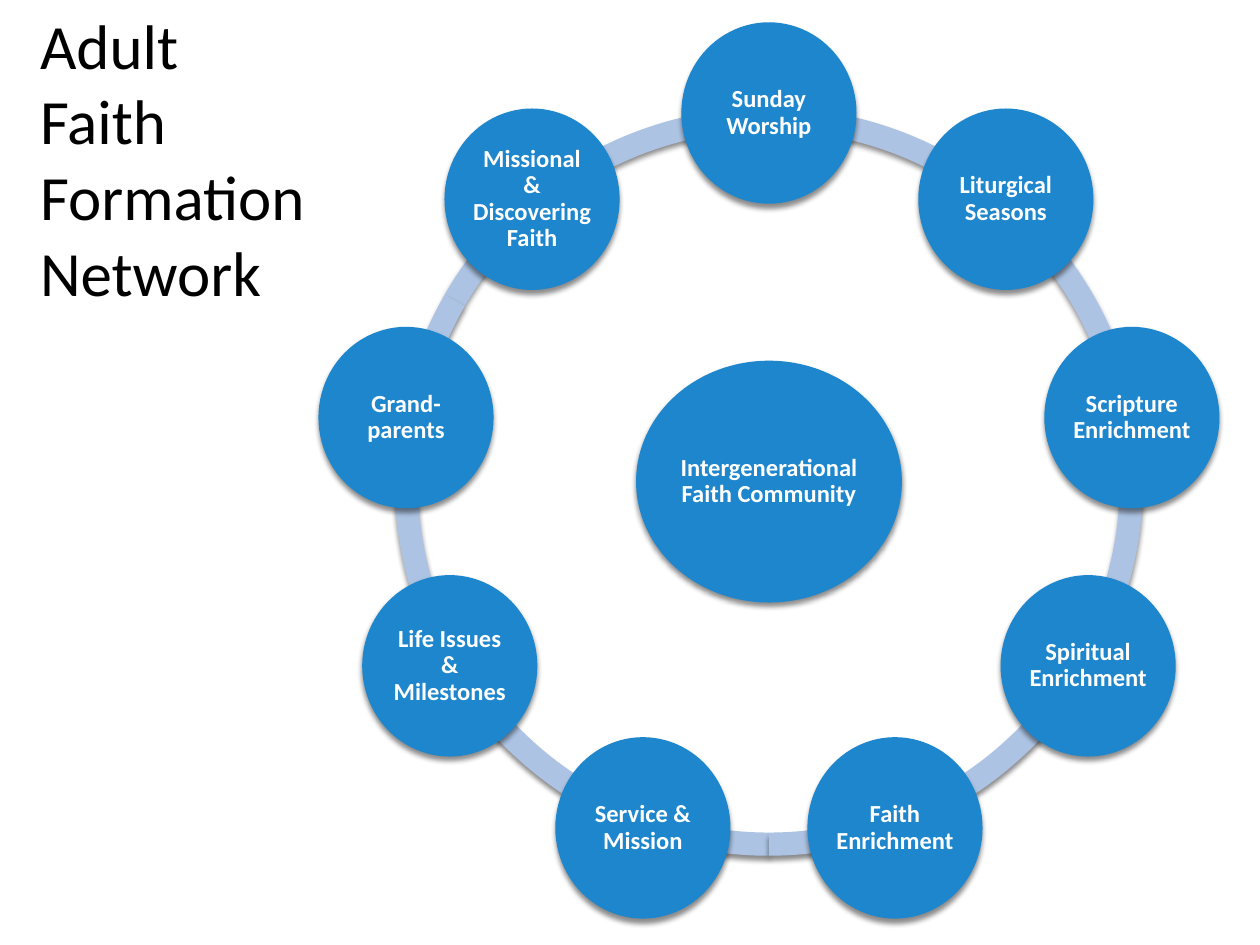
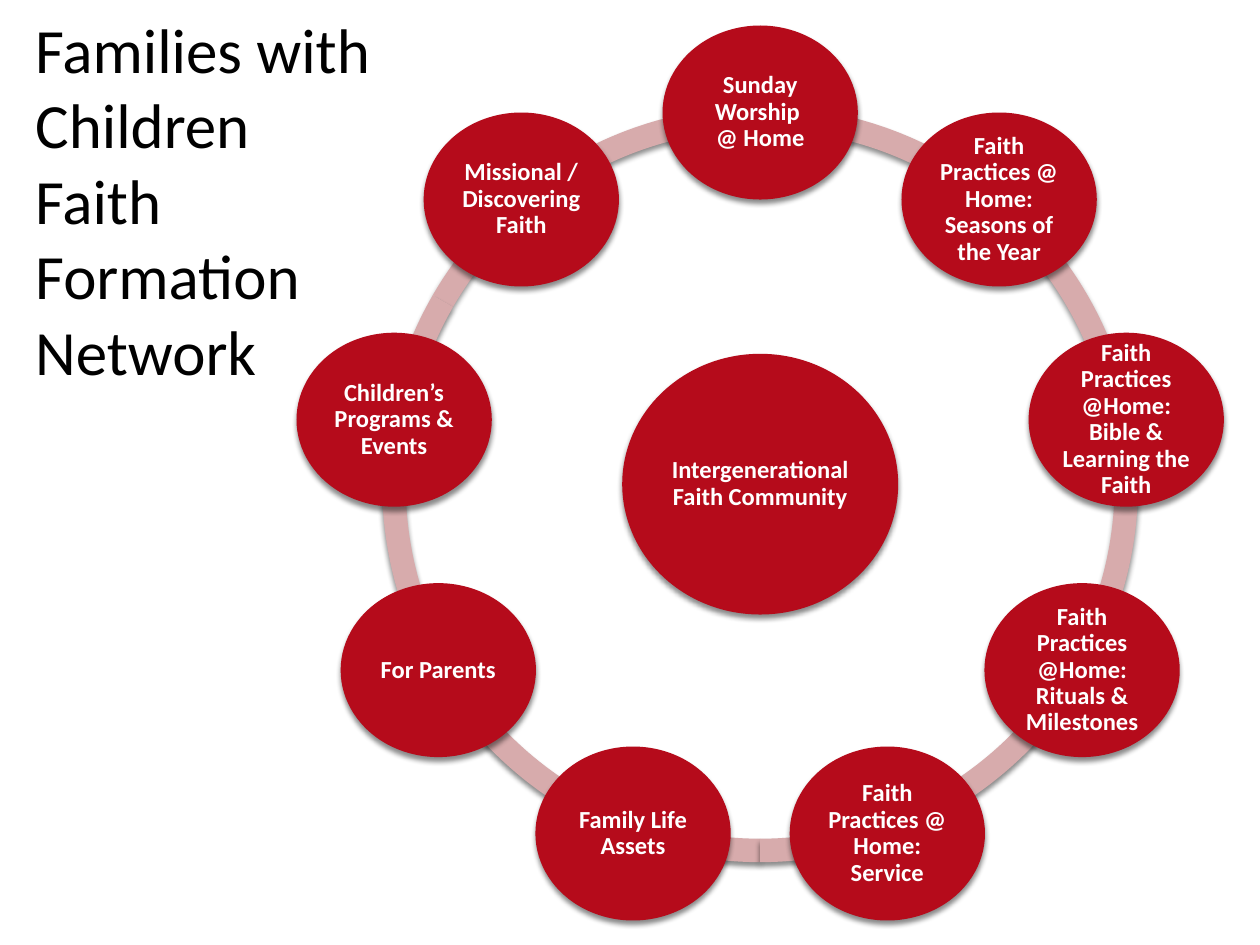
from dataclasses import dataclass
from math import cos, radians, sin

from lxml.etree import SubElement
from pptx import Presentation
from pptx.dml.color import RGBColor
from pptx.enum.shapes import MSO_SHAPE as Preset
from pptx.enum.text import MSO_ANCHOR as Anchor
from pptx.enum.text import MSO_AUTO_SIZE as AutoSize
from pptx.enum.text import PP_ALIGN as Align
from pptx.oxml.ns import qn
from pptx.util import Pt


@dataclass(frozen=True)
class Theme:
    font: str = "Calibri"
    title_size: int = 36
    label_size: int = 14
    title_color: str = "000000"
    label_color: str = "FFFFFF"
    shadow_color: str = "000000"
    adult: tuple = ("1D86CD", "ACC3E3")  # circles, ring
    family: tuple = ("B50B1B", "D7ABAC")


@dataclass(frozen=True)
class Network:
    title: list
    title_box: tuple
    colors: tuple
    center: tuple
    ring_size: float
    orbit: float
    hub_size: tuple
    topic_size: tuple
    topics: list


THEME = Theme()
HUB = "Intergenerational Faith Community"

NETWORKS = [
    Network(
        title=["Adult", "Faith Formation", "Network"],
        title_box=(15.8, 0, 215.3, 181.4),
        colors=THEME.adult,
        center=(439.4, 275.2),
        ring_size=427.7,
        orbit=210.6,
        hub_size=(151.9, 138.2),
        topic_size=(100.1, 103.7),
        topics=[
            "Sunday Worship",
            "Liturgical Seasons",
            "Scripture Enrichment",
            "Spiritual Enrichment",
            "Faith Enrichment",
            "Service & Mission",
            "Life Issues & Milestones",
            "Grand-parents",
            "Missional & Discovering Faith",
        ],
    ),
    Network(
        title=["Families with Children", "Faith", "Formation", "Network"],
        title_box=(13, 2.2, 234, 225.4),
        colors=THEME.family,
        center=(434.4, 276.7),
        ring_size=432,
        orbit=212.4,
        hub_size=(157.7, 149),
        topic_size=(111.6, 99.4),
        topics=[
            "Sunday Worship \v@ Home",
            "Faith Practices @ Home: Seasons of the Year",
            "Faith Practices @Home: Bible & Learning the Faith",
            "Faith Practices @Home: Rituals & Milestones",
            "Faith Practices @ Home: Service",
            "Family Life Assets",
            "For Parents",
            "Children’s Programs & Events",
            "Missional / Discovering Faith",
        ],
    ),
]


def style_text(para, size, color, bold=False):
    for span in para.runs:
        span.font.name = THEME.font
        span.font.size = Pt(size)
        span.font.bold = bold
        span.font.color.rgb = RGBColor.from_string(color)


def add_shadow(shape):
    shape.shadow.inherit = False
    effects = shape._element.spPr.find(qn("a:effectLst"))
    shadow = SubElement(effects, qn("a:outerShdw"), blurRad=str(Pt(3)),
                        dist=str(Pt(2.4)), dir="5400000", rotWithShape="0")
    color = SubElement(shadow, qn("a:srgbClr"), val=THEME.shadow_color)
    SubElement(color, qn("a:alpha"), val="45000")


def add_centered(group, preset, center, size, color):
    left, top = (middle - extent / 2 for middle, extent in zip(center, size))
    shape = group.shapes.add_shape(preset, Pt(left), Pt(top), Pt(size[0]), Pt(size[1]))
    shape.fill.solid()
    shape.fill.fore_color.rgb = RGBColor.from_string(color)
    shape.line.fill.background()
    add_shadow(shape)
    return shape


def add_ring(group, network):
    """Nine arcs that close the circle; the last span runs from 210 back to 18."""
    for index in range(9):
        start = 18 + (120 - 24 * index) % 216
        end = 18 + (start + 6) % 216
        arc = add_centered(group, Preset.BLOCK_ARC, network.center,
                           (network.ring_size, network.ring_size), network.colors[1])
        # Angles are stored in 60000ths of a degree, adjustments in 100000ths
        arc.adjustments[0] = start * 0.6
        arc.adjustments[1] = end * 0.6
        arc.adjustments[2] = 0.031


def add_circle(group, label, center, size, color):
    circle = add_centered(group, Preset.OVAL, center, size, color)
    frame = circle.text_frame
    frame.word_wrap = True
    frame.vertical_anchor = Anchor.MIDDLE
    frame.margin_left = frame.margin_right = Pt(1.4)
    frame.margin_top = frame.margin_bottom = Pt(1.4)
    frame.text = label
    para = frame.paragraphs[0]
    para.alignment = Align.CENTER
    para.line_spacing = 0.9
    style_text(para, THEME.label_size, THEME.label_color, bold=True)


def add_topics(group, network):
    step = 360 / len(network.topics)
    x, y = network.center
    for index, topic in enumerate(network.topics):
        angle = radians(index * step)
        center = (x + network.orbit * sin(angle), y - network.orbit * cos(angle))
        add_circle(group, topic, center, network.topic_size, network.colors[0])


def add_title(page, lines, place):
    box = page.shapes.add_textbox(*(Pt(length) for length in place))
    frame = box.text_frame
    frame.word_wrap = True
    frame.auto_size = AutoSize.SHAPE_TO_FIT_TEXT
    frame.text = "\n".join(lines)
    for para in frame.paragraphs:
        style_text(para, THEME.title_size, THEME.title_color)


def add_network_page(deck, network):
    page = deck.slides.add_slide(deck.slide_layouts[6])
    # Diagram: ring, hub, then the topics around it
    group = page.shapes.add_group_shape()
    add_ring(group, network)
    add_circle(group, HUB, network.center, network.hub_size, network.colors[0])
    add_topics(group, network)
    # Title at top left
    add_title(page, network.title, network.title_box)


def main():
    deck = Presentation()
    deck.slide_width, deck.slide_height = Pt(720), Pt(540)
    for network in NETWORKS:
        add_network_page(deck, network)
    deck.save("out.pptx")


if __name__ == "__main__":
    main()
